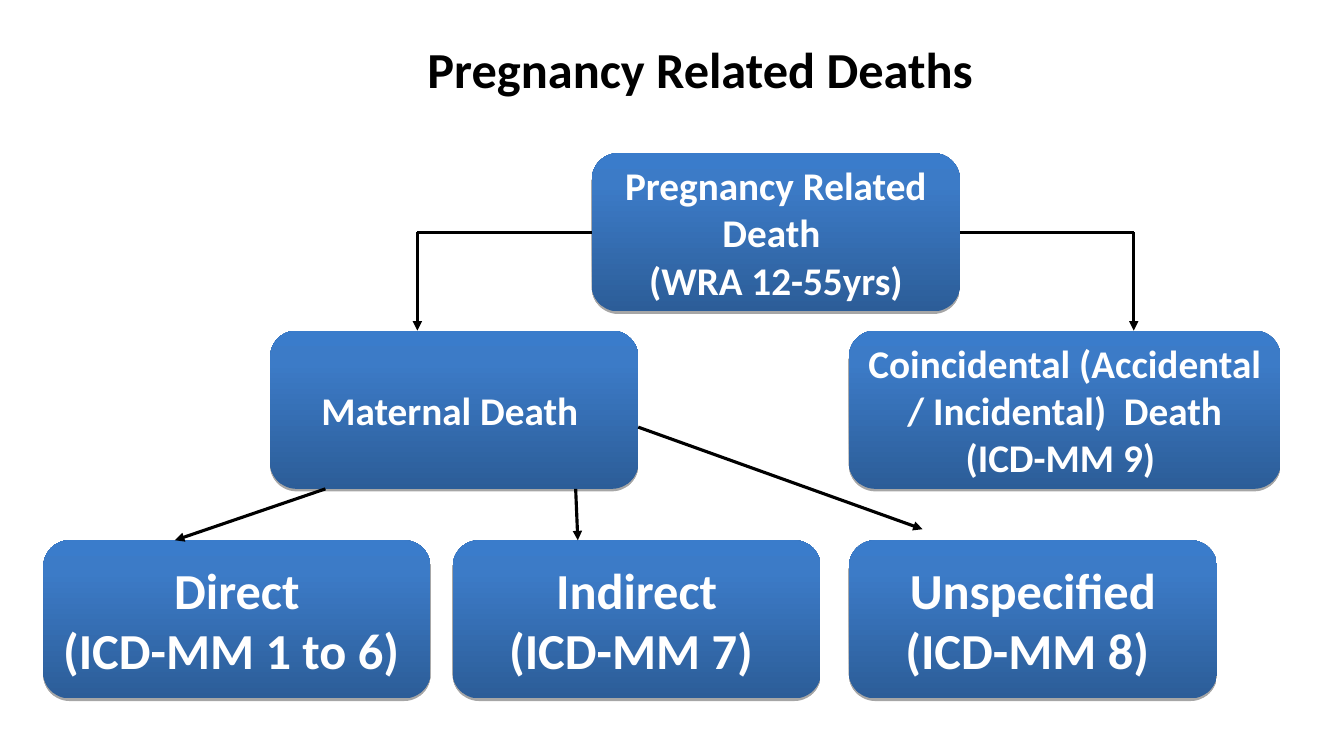
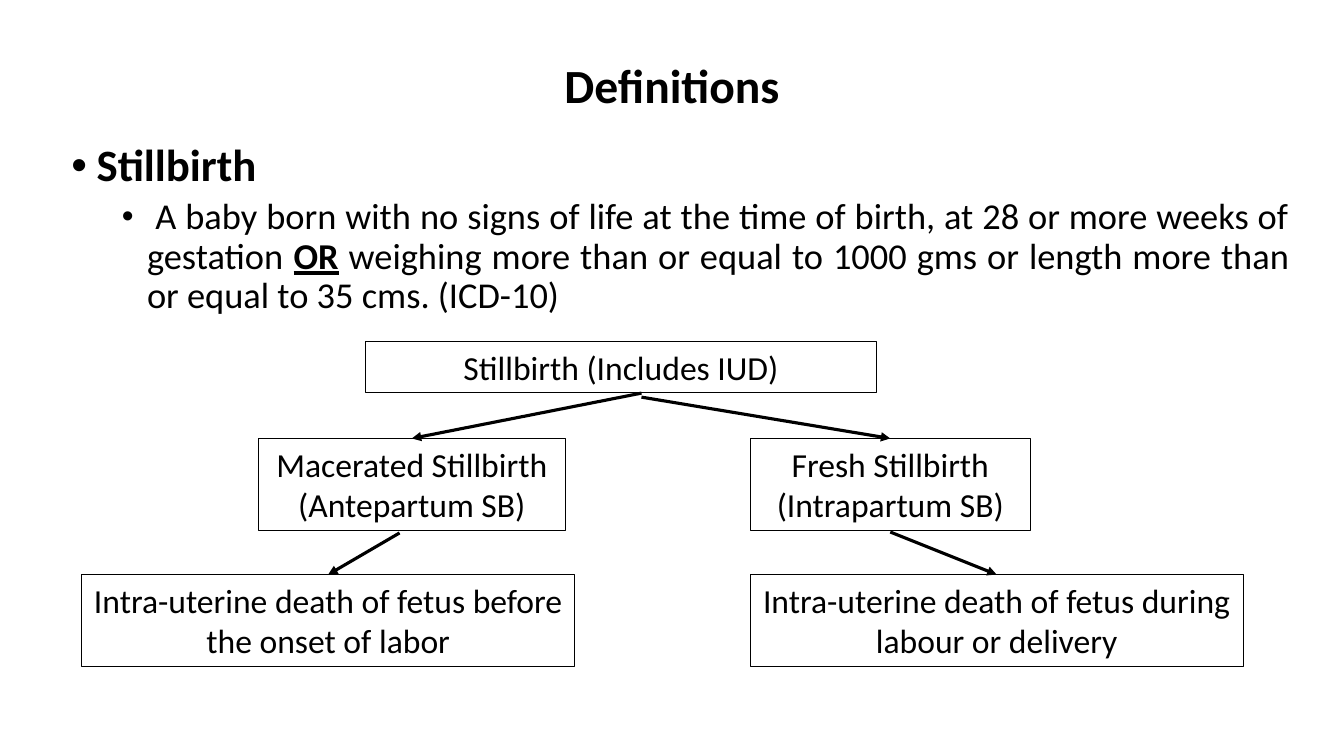
from lxml.etree import SubElement
from pptx import Presentation
from pptx.dml.color import RGBColor
from pptx.enum.shapes import MSO_CONNECTOR, MSO_SHAPE
from pptx.enum.text import MSO_ANCHOR, PP_ALIGN
from pptx.oxml.ns import qn
from pptx.util import Inches, Pt

FONT = "Calibri"
BLACK = RGBColor(0x00, 0x00, 0x00)
WHITE = RGBColor(0xFF, 0xFF, 0xFF)
GRADIENT = [
    (0, RGBColor(0x2C, 0x5D, 0x98)),
    (80, RGBColor(0x3C, 0x7B, 0xC7)),
    (100, RGBColor(0x3A, 0x7C, 0xCB)),
]

# Boxes: name -> (left, top, width, height), text size, paragraphs
ROW_1, ROW_2, ROW_3 = 1.52, 3.28, 5.36
CARD_W, CARD_H = 3.65, 1.57
DEATHS = {
    "root": ((5.87, ROW_1, CARD_W, CARD_H), 28,
             ["Pregnancy Related Death ", "(WRA 12-55yrs)"]),
    "coincidental": ((8.42, ROW_2, 4.28, CARD_H), 28,
                     ["Coincidental (Accidental / Incidental)  Death", "(ICD-MM 9) "]),
    "maternal": ((2.68, ROW_2, CARD_W, CARD_H), 28, ["Maternal Death "]),
    "direct": ((0.43, ROW_3, 3.84, CARD_H), 36, ["Direct", "(ICD-MM 1 to 6) "]),
    "indirect": ((4.49, ROW_3, CARD_W, CARD_H), 36, ["Indirect", "(ICD-MM 7) "]),
    "unspecified": ((8.42, ROW_3, CARD_W, CARD_H), 36, ["Unspecified", "(ICD-MM 8) "]),
}
# Links: source, (x, y) share of its box, target, (x, y) share of its box
DEATH_ELBOWS = [
    ("root", (0, 0.5), "maternal", (0.4, 0)),
    ("root", (1, 0.5), "coincidental", (0.66, 0)),
]
DEATH_ARROWS = [
    ("maternal", (0.15, 1), "direct", (0.34, 0)),
    ("maternal", (0.83, 1), "indirect", (0.34, 0)),
    ("maternal", (1, 0.61), "unspecified", (0.2, -0.07)),
]

RIGHT_COL, LEAF_W, BOX_H = 7.44, 4.89, 0.91
STILLBIRTHS = {
    "stillbirth": ((3.63, 3.39, 5.06, 0.5), 24, ["Stillbirth (Includes IUD)"]),
    "macerated": ((2.56, 4.35, 3.05, BOX_H), 24,
                  ["Macerated Stillbirth", "(Antepartum SB)"]),
    "fresh": ((RIGHT_COL, 4.35, 2.78, BOX_H), 24,
              ["Fresh Stillbirth", "(Intrapartum SB)"]),
    "before": ((0.81, 5.7, LEAF_W, BOX_H), 24,
               ["Intra-uterine death of fetus before the onset of labor"]),
    "during": ((RIGHT_COL, 5.7, LEAF_W, BOX_H), 24,
               ["Intra-uterine death of fetus during labour or delivery"]),
}
STILLBIRTH_ARROWS = [
    ("stillbirth", (0.54, 1.02), "macerated", (0.5, 0)),
    ("stillbirth", (0.54, 1.1), "fresh", (0.5, 0)),
    ("macerated", (0.46, 1.03), "before", (0.5, 0)),
    ("fresh", (0.5, 1.02), "during", (0.5, 0)),
]

# Definition: level, left margin, space before, runs of (text, font format)
PLAIN = {"size": Pt(26)}
DEFINITION = [
    (0, 0.25, 10, [("Stillbirth", {"size": Pt(32), "bold": True})]),
    (1, 0.75, 5, [
        (" ", {"size": Pt(24)}),
        ("A baby born with no signs of life at the time of birth, "
         "at 28 or more weeks of gestation ", PLAIN),
        ("OR", {"size": Pt(26), "bold": True, "underline": True}),
        (" weighing more than or equal to 1000 gms or length more than "
         "or equal to 35 cms. (ICD-10)", PLAIN),
    ]),
]


def add_run(p, text, color=BLACK, **formats):
    r = p.add_run()
    r.text = text
    r.font.name = FONT
    r.font.color.rgb = color
    for name, value in formats.items():
        setattr(r.font, name, value)


def paragraph(tf, i, align):
    p = tf.add_paragraph() if i else tf.paragraphs[0]
    p.alignment = align
    return p


def add_text_frame(slide, at):
    tf = slide.shapes.add_textbox(*map(Inches, at)).text_frame
    tf.word_wrap = True
    return tf


def add_title(slide, text, size, at):
    tf = add_text_frame(slide, at)
    tf.vertical_anchor = MSO_ANCHOR.MIDDLE
    p = paragraph(tf, 0, PP_ALIGN.CENTER)
    p.line_spacing = 0.9
    add_run(p, text, size=Pt(size), bold=True)


def add_definition(slide, at):
    tf = add_text_frame(slide, at)
    for i, (level, margin, before, runs) in enumerate(DEFINITION):
        p = paragraph(tf, i, PP_ALIGN.JUSTIFY)
        p.level, p.line_spacing, p.space_before = level, 0.9, Pt(before)
        pPr = p._p.get_or_add_pPr()
        pPr.set("marL", str(Inches(margin)))
        pPr.set("indent", str(Inches(-0.25)))
        SubElement(pPr, qn("a:buFont"), typeface="Arial")
        SubElement(pPr, qn("a:buChar"), char="•")
        for text, formats in runs:
            add_run(p, text, **formats)


def style_card(s):
    """Blue gradient, dark at the bottom, with a thin shadow underneath."""
    s.fill.gradient()
    s.fill.gradient_angle = 90
    spPr = s._element.spPr
    stops = spPr.find(qn("a:gradFill")).find(qn("a:gsLst"))
    for stop in list(stops):
        stops.remove(stop)
    for share, color in GRADIENT:
        stop = SubElement(stops, qn("a:gs"), pos=str(share * 1000))
        SubElement(stop, qn("a:srgbClr"), val=str(color))
    s.line.fill.background()
    shadow = SubElement(spPr.find(qn("a:effectLst")), qn("a:outerShdw"),
                        dist=str(Pt(1.8)), dir="5400000", rotWithShape="0")
    black = SubElement(shadow, qn("a:srgbClr"), val=str(BLACK))
    SubElement(black, qn("a:alpha"), val="35000")


def style_outline(s):
    s.fill.background()
    s.line.color.rgb = BLACK
    s.line.width = Pt(0.75)


def add_boxes(slide, boxes, preset, style, anchor, color, bold):
    for at, size, lines in boxes.values():
        s = slide.shapes.add_shape(preset, *map(Inches, at))
        s.shadow.inherit = False
        style(s)
        tf = s.text_frame
        tf.word_wrap = True
        tf.vertical_anchor = anchor
        for i, line in enumerate(lines):
            add_run(paragraph(tf, i, PP_ALIGN.CENTER), line, color,
                    size=Pt(size), bold=bold)


def add_line(slide, start, end, arrow=True):
    s = slide.shapes.add_connector(MSO_CONNECTOR.STRAIGHT,
                                   *map(Inches, (*start, *end)))
    s.line.color.rgb = BLACK
    s.line.width = Pt(2.25)
    if arrow:
        SubElement(s.line._get_or_add_ln(), qn("a:tailEnd"), type="triangle")
    SubElement(s._element.spPr, qn("a:effectLst"))


def point(boxes, name, share):
    left, top, width, height = boxes[name][0]
    return left + share[0] * width, top + share[1] * height


def add_links(slide, boxes, links, elbow=False):
    for source, source_share, target, target_share in links:
        start = point(boxes, source, source_share)
        end = point(boxes, target, target_share)
        if elbow:
            corner = end[0], start[1]
            add_line(slide, start, corner, arrow=False)
            start = corner
        add_line(slide, start, end)


def main():
    prs = Presentation()
    prs.slide_width, prs.slide_height = Inches(13.33), Inches(7.5)
    blank = prs.slide_layouts[6]

    slide = prs.slides.add_slide(blank)
    add_title(slide, "Pregnancy Related Deaths", 36, (1.37, 0.31, 11.15, 0.81))
    add_boxes(slide, DEATHS, MSO_SHAPE.ROUNDED_RECTANGLE, style_card,
              MSO_ANCHOR.MIDDLE, WHITE, True)
    add_links(slide, DEATHS, DEATH_ELBOWS, elbow=True)
    add_links(slide, DEATHS, DEATH_ARROWS)

    slide = prs.slides.add_slide(blank)
    add_title(slide, "Definitions", 34, (0.81, 0.47, 11.71, 0.81))
    add_definition(slide, (0.61, 1.37, 12.29, 5.85))
    add_boxes(slide, STILLBIRTHS, MSO_SHAPE.RECTANGLE, style_outline,
              MSO_ANCHOR.TOP, BLACK, False)
    add_links(slide, STILLBIRTHS, STILLBIRTH_ARROWS)

    prs.save("out.pptx")


if __name__ == "__main__":
    main()
